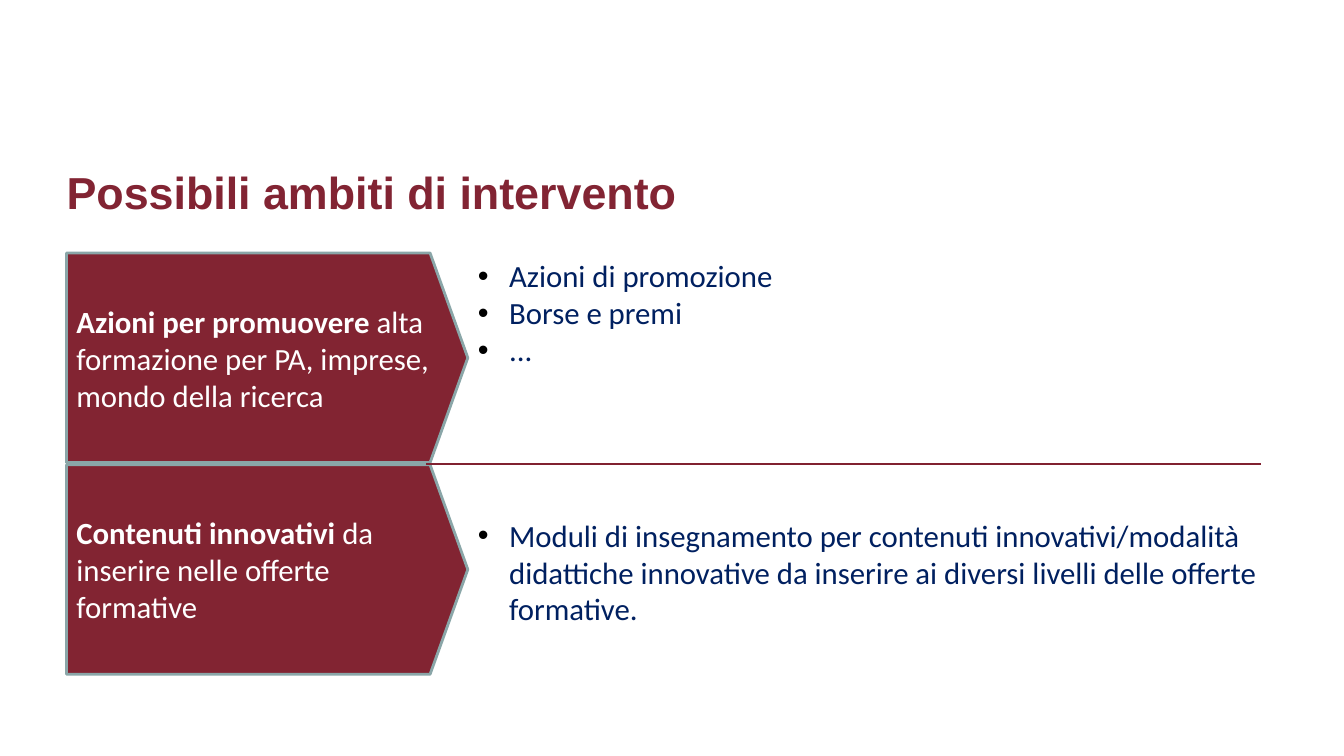
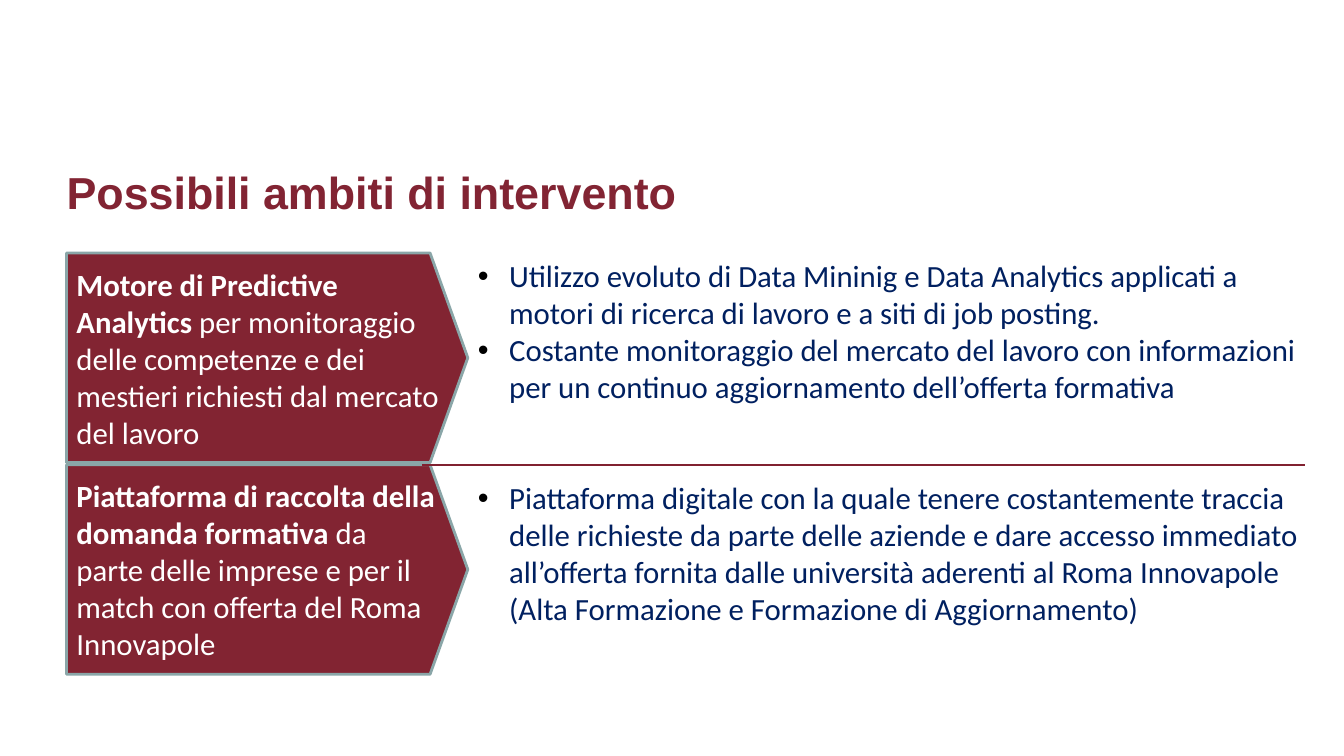
from lxml import etree
from pptx import Presentation
from pptx.dml.color import RGBColor
from pptx.enum.shapes import MSO_CONNECTOR, MSO_SHAPE
from pptx.enum.text import MSO_ANCHOR as Anchor, MSO_AUTO_SIZE as AutoSize, PP_ALIGN as Align
from pptx.oxml.ns import qn
from pptx.util import Inches, Pt

WHITE, BLACK, NAVY = "FFFFFF", "000000", "002060"
ARROW_RED, TITLE_RED, RULE_RED, ARROW_EDGE = "822432", "822433", "812130", "8AA6A8"
BODY_FONT, TITLE_FONT = "Calibri", "Arial"
BODY_SIZE, TITLE_SIZE = 22, 32
LINE_HEIGHT = 26.5  # points, one line of body text

LEFT, TOP = 0.66, 2.51
ARROW_WIDTH, ARROW_HEIGHT, ROW_PITCH = 3.98, 2.08, 2.1
BODY_LEFT = LEFT + ARROW_WIDTH
BODY_WIDTH = 8.43
BULLET_INDENT = 0.31

TITLE = "Possibili ambiti di intervento"

# Each row is (bold label, rest of the label, bullets); gap is in lines of text.
SLIDES = [
    {
        "rows": [
            ("Azioni per promuovere ",
             "alta formazione per PA, imprese, mondo della ricerca",
             ["Azioni di promozione", "Borse e premi", "..."]),
            ("Contenuti innovativi ",
             "da inserire nelle offerte formative",
             ["Moduli di insegnamento per contenuti innovativi/modalità didattiche "
              "innovative da inserire ai diversi livelli delle offerte formative."]),
        ],
        "gap": 4,
        "body_height": 3.8,
        "rule": (4.23, 12.51, 4.6),
    },
    {
        "rows": [
            ("Motore di Predictive Analytics ",
             "per monitoraggio delle competenze e dei mestieri richiesti "
             "dal mercato del lavoro",
             ["Utilizzo evoluto di Data Mininig e Data Analytics applicati a motori "
              "di ricerca di lavoro e a siti di job posting.",
              "Costante monitoraggio del mercato del lavoro con informazioni per un "
              "continuo aggiornamento dell’offerta formativa"]),
            ("Piattaforma di raccolta della domanda formativa ",
             "da parte delle imprese e per il match con offerta del Roma Innovapole",
             ["Piattaforma digitale con la quale tenere costantemente traccia delle "
              "richieste da parte delle aziende e dare accesso immediato all’offerta "
              "fornita dalle università aderenti al Roma Innovapole "
              "(Alta Formazione e Formazione di Aggiornamento)"]),
        ],
        "gap": 2,
        "body_height": 4.17,
        "rule": (4.19, 12.94, 4.61),
    },
]


def color(hex_text):
    return RGBColor.from_string(hex_text)


def add_text(paragraph, text, size=BODY_SIZE, font=BODY_FONT, fill=NAVY, bold=False):
    run = paragraph.add_run()
    run.text = text
    run.font.size = Pt(size)
    run.font.name = font
    run.font.bold = bold
    run.font.color.rgb = color(fill)


def place(shape, left, top, width, height):
    shape.left, shape.top = Inches(left), Inches(top)
    shape.width, shape.height = Inches(width), Inches(height)


def set_frame(frame, anchor):
    frame.word_wrap = True
    frame.auto_size = AutoSize.NONE
    frame.vertical_anchor = anchor


def set_bullet(paragraph):
    properties = paragraph._p.get_or_add_pPr()
    properties.set("marL", str(Inches(BULLET_INDENT)))
    properties.set("indent", str(-Inches(BULLET_INDENT)))
    bullet_color = etree.SubElement(properties, qn("a:buClr"))
    etree.SubElement(bullet_color, qn("a:srgbClr"), val=BLACK)
    etree.SubElement(properties, qn("a:buFont"), typeface=TITLE_FONT)
    etree.SubElement(properties, qn("a:buChar"), char="•")


def fill_title(slide):
    title = slide.shapes.title
    place(title, LEFT, 1.7, 9.7, 0.56)
    frame = title.text_frame
    set_frame(frame, Anchor.TOP)
    frame.margin_left = frame.margin_right = frame.margin_bottom = 0
    frame.margin_top = Inches(0.04)
    paragraph = frame.paragraphs[0]
    paragraph.alignment = Align.LEFT
    paragraph.line_spacing = 0.8
    add_text(paragraph, TITLE, size=TITLE_SIZE, font=TITLE_FONT, fill=TITLE_RED, bold=True)


def fill_body(slide, groups, gap, height):
    """Write the bullet groups as one list, set apart by a gap in lines."""
    body = slide.placeholders[1]
    place(body, BODY_LEFT, 2.5, BODY_WIDTH, height)
    frame = body.text_frame
    set_frame(frame, Anchor.TOP)
    paragraph = frame.paragraphs[0]
    for group_index, bullets in enumerate(groups):
        for index, text in enumerate(bullets):
            if group_index or index:
                paragraph = frame.add_paragraph()
            set_bullet(paragraph)
            opens_group = group_index and index == 0
            paragraph.space_before = Pt(gap * LINE_HEIGHT if opens_group else 0)
            add_text(paragraph, text)


def add_arrow(slide, row, bold_text, plain_text):
    arrow = slide.shapes.add_shape(
        MSO_SHAPE.PENTAGON, Inches(LEFT), Inches(TOP + row * ROW_PITCH),
        Inches(ARROW_WIDTH), Inches(ARROW_HEIGHT))
    arrow.adjustments[0] = 0.18
    arrow.shadow.inherit = False
    arrow.fill.solid()
    arrow.fill.fore_color.rgb = color(ARROW_RED)
    arrow.line.color.rgb = color(ARROW_EDGE)
    arrow.line.width = Pt(2)
    set_frame(arrow.text_frame, Anchor.MIDDLE)
    paragraph = arrow.text_frame.paragraphs[0]
    paragraph.alignment = Align.LEFT
    add_text(paragraph, bold_text, fill=WHITE, bold=True)
    add_text(paragraph, plain_text, fill=WHITE)


def add_rule(slide, start, end, top):
    rule = slide.shapes.add_connector(
        MSO_CONNECTOR.STRAIGHT, Inches(start), Inches(top), Inches(end), Inches(top))
    rule.line.color.rgb = color(RULE_RED)
    rule.line.width = Pt(1.5)
    etree.SubElement(rule._element.spPr, qn("a:effectLst"))


def main():
    presentation = Presentation()
    presentation.slide_width, presentation.slide_height = Inches(13.33), Inches(7.5)
    for content in SLIDES:
        slide = presentation.slides.add_slide(presentation.slide_layouts[1])
        fill_title(slide)
        for row, (bold_text, plain_text, _) in enumerate(content["rows"]):
            add_arrow(slide, row, bold_text, plain_text)
        groups = [bullets for _, _, bullets in content["rows"]]
        fill_body(slide, groups, content["gap"], content["body_height"])
        add_rule(slide, *content["rule"])
    presentation.save("out.pptx")


if __name__ == "__main__":
    main()
